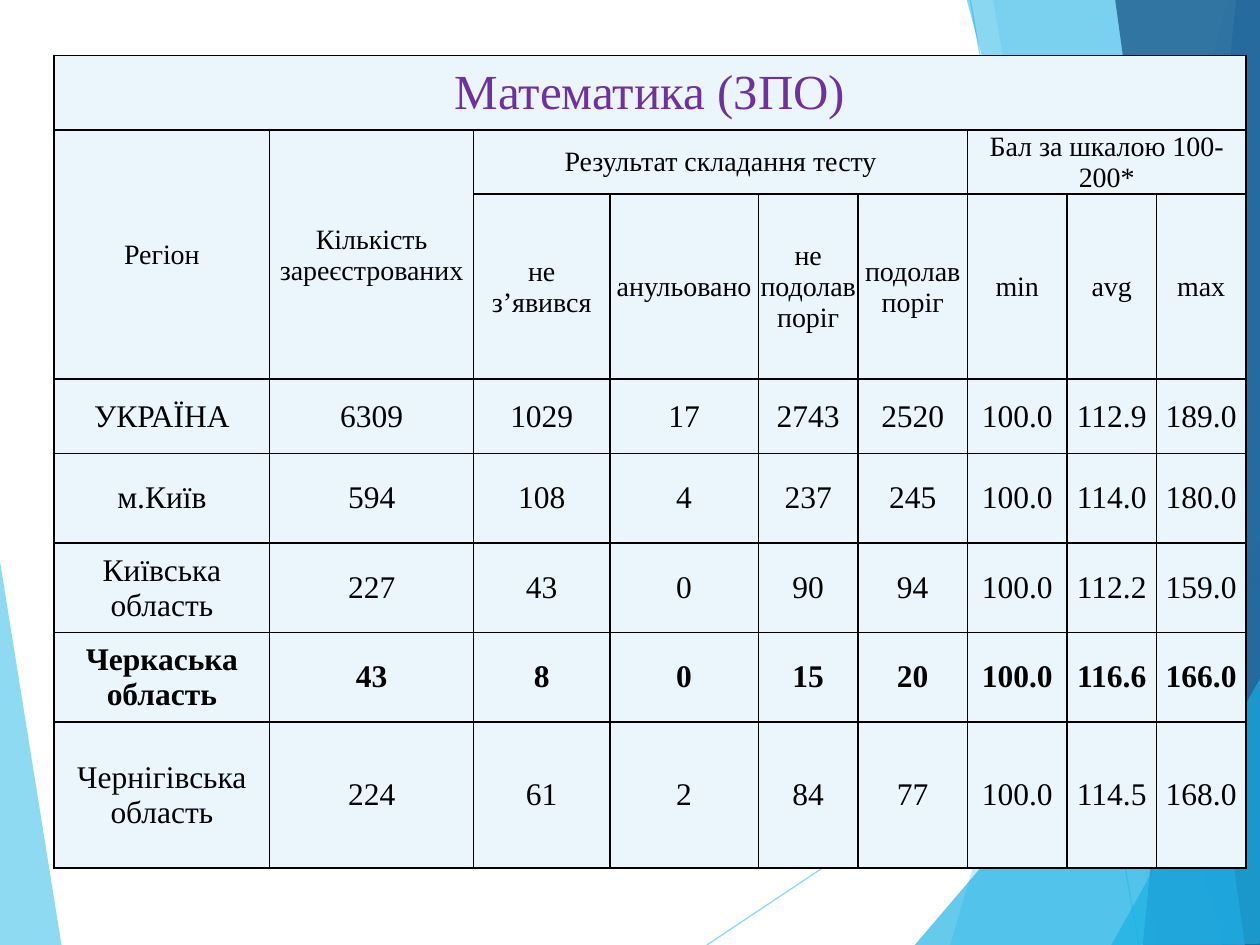
from dataclasses import dataclass

from lxml.etree import SubElement
from pptx import Presentation
from pptx.dml.color import RGBColor
from pptx.enum.shapes import MSO_CONNECTOR
from pptx.enum.text import MSO_VERTICAL_ANCHOR as Anchor, PP_PARAGRAPH_ALIGNMENT as Align
from pptx.oxml.ns import qn
from pptx.util import Inches, Pt

Point = tuple[float, float]
SKY, AQUA = "5FCBEF", "17B0E4"
INK, PANEL, PURPLE = "000000", "EAF6FC", "7030A0"
FONT = "Times New Roman"


@dataclass(frozen=True)
class Facet:
    points: tuple[Point, ...]
    color: str
    opacity: int


@dataclass(frozen=True)
class Ray:
    start: Point
    end: Point


@dataclass(frozen=True)
class Heading:
    row: int
    column: int
    text: str
    rows: int = 1
    columns: int = 1
    size: int = 16
    color: str = INK


@dataclass(frozen=True)
class Region:
    name: str
    results: str
    bold: bool = False


LEFT_FACET = Facet(((-0.01, 4.39), (0.49, 7.51), (-0.01, 7.5)), SKY, 70)
RAYS = [Ray((5.61, 7.5), (10.01, 4.57)), Ray((7.7, 0), (9.04, 7.5))]
RIGHT_FACETS = [
    Facet(((9.75, 0), (7.54, 7.5), (10.02, 7.51), (10.01, 0.01)), SKY, 36),
    Facet(((7.88, -0.01), (9.19, 7.5), (10.01, 7.5), (10.01, -0.01)), SKY, 20),
    Facet(((7.26, 7.5), (10, 4.29), (10.01, 7.5)), AQUA, 66),
    Facet(((7.67, -0.01), (9.7, 7.5), (10.01, 7.49), (10.01, -0.01)), AQUA, 50),
    Facet(((9.81, -0.01), (9.07, 7.5), (10.01, 7.5), (10, -0.01)), "2E83C3", 70),
    Facet(((8.85, -0.01), (9.88, 7.5), (10.02, 7.5), (10, -0.01)), "226292", 82),
    Facet(((8.82, 7.5), (10.02, 5.35), (10.02, 7.49)), AQUA, 66),
]

COLUMN_WIDTHS = [1.71, 1.62, 1.08, 1.18, 0.79, 0.87, 0.79, 0.71, 0.71]
ROW_HEIGHTS = [0.59, 0.51, 1.47, 0.59, 0.71, 0.71, 0.71, 1.16]
OUTCOMES = ["не з’явився", "анульовано", "не подолав поріг", "подолав поріг",
            "min", "avg", "max"]
HEADINGS = [
    Heading(0, 0, "Математика (ЗПО)", columns=9, size=28, color=PURPLE),
    Heading(1, 0, "Регіон", rows=2),
    Heading(1, 1, "Кількість зареєстрованих", rows=2),
    Heading(1, 2, "Результат складання тесту", columns=4),
    Heading(1, 6, "Бал за шкалою 100-200*", columns=3),
    *(Heading(2, column, outcome) for column, outcome in enumerate(OUTCOMES, 2)),
]
FIRST_REGION_ROW = 3
REGIONS = [
    Region("УКРАЇНА", "6309 1029 17 2743 2520 100.0 112.9 189.0"),
    Region("м.Київ", "594 108 4 237 245 100.0 114.0 180.0"),
    Region("Київська область", "227 43 0 90 94 100.0 112.2 159.0"),
    Region("Черкаська область", "43 8 0 15 20 100.0 116.6 166.0", bold=True),
    Region("Чернігівська область", "224 61 2 84 77 100.0 114.5 168.0"),
]


def rgb(color: str) -> RGBColor:
    return RGBColor.from_string(color)


def apply_format(target, values: dict) -> None:
    for attribute, value in values.items():
        setattr(target, attribute, value)


def set_opacity(properties, percent: int) -> None:
    color = next(properties.iter(qn("a:srgbClr")))
    SubElement(color, qn("a:alpha"), val=str(percent * 1000))


def draw_facet(slide, facet: Facet) -> None:
    corners = [(Inches(x), Inches(y)) for x, y in facet.points]
    builder = slide.shapes.build_freeform(*corners[0])
    builder.add_line_segments(corners[1:], close=True)
    pane = builder.convert_to_shape()
    pane.shadow.inherit = False
    pane.line.fill.background()
    pane.fill.solid()
    pane.fill.fore_color.rgb = rgb(facet.color)
    set_opacity(pane.element.spPr, facet.opacity)


def draw_ray(slide, ray: Ray) -> None:
    ends = [Inches(value) for value in (*ray.start, *ray.end)]
    beam = slide.shapes.add_connector(MSO_CONNECTOR.STRAIGHT, *ends)
    beam.line.width = Pt(0.75)
    beam.line.color.rgb = rgb(SKY)
    set_opacity(beam.element.spPr, 70)
    SubElement(beam.element.spPr, qn("a:effectLst"))


def style_cell(cell) -> None:
    properties = cell._tc.get_or_add_tcPr()
    for side in ("lnL", "lnR", "lnT", "lnB"):
        border = SubElement(properties, qn(f"a:{side}"), w=str(Pt(1)))
        SubElement(SubElement(border, qn("a:solidFill")), qn("a:srgbClr"), val=INK)
    cell.fill.solid()
    cell.fill.fore_color.rgb = rgb(PANEL)


def write_cell(cell, text: str, size: int, color: str = INK,
               bold: bool = False, padding: tuple[float, float] = (0.01, 0)) -> None:
    top, bottom = padding
    apply_format(cell, {
        "text": text,
        "vertical_anchor": Anchor.MIDDLE,
        "margin_left": Inches(0.01),
        "margin_right": Inches(0.01),
        "margin_top": Inches(top),
        "margin_bottom": Inches(bottom),
    })
    paragraph = cell.text_frame.paragraphs[0]
    paragraph.alignment = Align.CENTER
    font = paragraph.runs[0].font
    apply_format(font, {"name": FONT, "size": Pt(size), "bold": bold})
    font.color.rgb = rgb(color)


def draw_heading(table, heading: Heading) -> None:
    cell = table.cell(heading.row, heading.column)
    if heading.rows > 1 or heading.columns > 1:
        cell.merge(table.cell(heading.row + heading.rows - 1,
                              heading.column + heading.columns - 1))
    write_cell(cell, heading.text, heading.size, heading.color)


def draw_region(table, row: int, region: Region) -> None:
    for column, value in enumerate([region.name, *region.results.split()]):
        is_tight = row == FIRST_REGION_ROW or (column == 0 and row > FIRST_REGION_ROW + 1)
        padding = (0.01, 0) if is_tight else (0.04, 0.04)
        write_cell(table.cell(row, column), value, 18, bold=region.bold, padding=padding)


def draw_results(slide) -> None:
    table = slide.shapes.add_table(
        len(ROW_HEIGHTS), len(COLUMN_WIDTHS), Inches(0.43), Inches(0.44),
        Inches(sum(COLUMN_WIDTHS)), Inches(sum(ROW_HEIGHTS))).table
    apply_format(table, {"first_row": False, "horz_banding": False})
    for column, width in zip(table.columns, COLUMN_WIDTHS):
        column.width = Inches(width)
    for row, height in zip(table.rows, ROW_HEIGHTS):
        row.height = Inches(height)
    for cell in table.iter_cells():
        style_cell(cell)
    for heading in HEADINGS:
        draw_heading(table, heading)
    for row, region in enumerate(REGIONS, FIRST_REGION_ROW):
        draw_region(table, row, region)


def main() -> None:
    deck = Presentation()
    apply_format(deck, {"slide_width": Inches(10), "slide_height": Inches(7.5)})
    slide = deck.slides.add_slide(deck.slide_layouts[6])
    draw_facet(slide, LEFT_FACET)
    for ray in RAYS:
        draw_ray(slide, ray)
    for facet in RIGHT_FACETS:
        draw_facet(slide, facet)
    draw_results(slide)
    deck.save("out.pptx")


if __name__ == "__main__":
    main()
